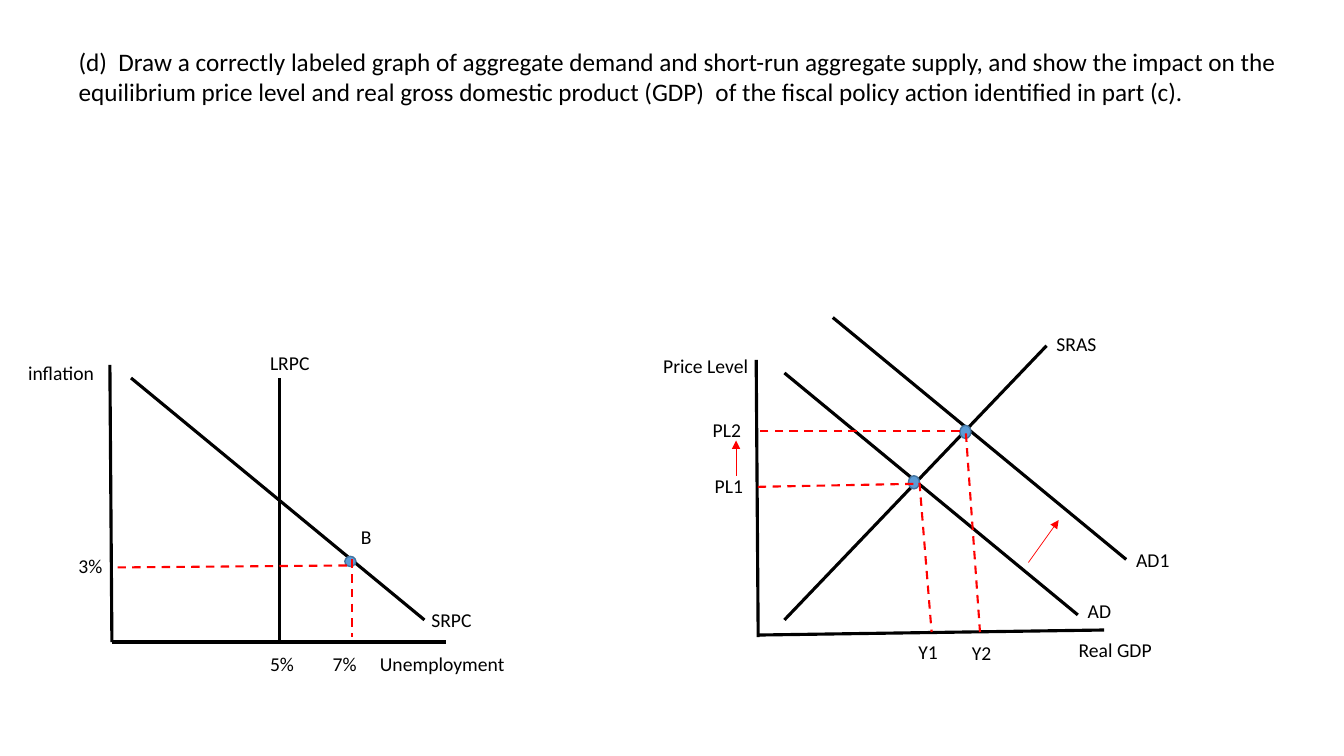
import pptx
import pptx.dml.color
import pptx.enum.dml
import pptx.enum.shapes
import pptx.enum.text
import pptx.oxml
import pptx.oxml.ns
import pptx.util
from pptx.util import Inches

COLOURS = {"ink": "000000", "guide": "FF0000", "point": "5B9BD5", "point_edge": "43739E"}
FONT = "Calibri"

QUESTION = (
    "(d)  Draw a correctly labeled graph of aggregate demand and short-run "
    "aggregate supply, and show the impact on the equilibrium price level and "
    "real gross domestic product (GDP)  of the fiscal policy action identified "
    "in part (c)."
)

# Phillips curve: lines are (x1, y1, x2, y2), labels (text, left, top)
PHILLIPS = {
    "curves": [
        (1.09, 3.62, 1.11, 6.37),  # inflation axis
        (4.42, 6.37, 1.11, 6.37),  # unemployment axis
        (4.21, 6.15, 1.3, 3.75),   # SRPC
        (2.77, 6.37, 2.77, 3.75),  # LRPC
    ],
    "points": [(3.42, 5.52, 0.11, 0.1)],
    "guides": [(3.49, 5.55, 3.49, 6.32), (3.44, 5.61, 1.11, 5.63)],
    "shifts": [],
    "labels": [
        ("inflation", 0.18, 3.53), ("Unemployment", 3.67, 6.42),
        ("SRPC", 4.18, 5.98), ("LRPC", 2.58, 3.43), ("B", 3.48, 5.16),
        ("5%", 2.58, 6.42), ("7%", 3.2, 6.42), ("3%", 0.68, 5.45),
    ],
}

# Aggregate demand and short-run aggregate supply
AGGREGATE = {
    "curves": [
        (7.5, 3.57, 7.52, 6.32),    # price level axis
        (10.95, 6.25, 7.52, 6.3),   # real GDP axis
        (10.69, 6.1, 7.78, 3.7),    # AD
        (10.38, 3.43, 7.78, 6.15),  # SRAS
        (11.17, 5.55, 8.26, 3.15),  # AD1
    ],
    "points": [(9.52, 4.22, 0.11, 0.13), (9.01, 4.72, 0.11, 0.13)],
    "guides": [
        (9.06, 4.8, 7.51, 4.83), (9.12, 4.79, 9.24, 6.27),
        (9.58, 4.3, 9.72, 6.27), (9.52, 4.28, 7.48, 4.28),
    ],
    "shifts": [(10.2, 5.58, 10.5, 5.16), (7.3, 4.72, 7.3, 4.37)],
    "labels": [
        ("Real GDP", 10.6, 6.28), ("Price Level", 6.48, 3.46),
        ("AD", 10.69, 5.89), ("SRAS", 10.38, 3.24), ("AD1", 11.17, 5.39),
        ("Y1", 9.01, 6.3), ("Y2", 9.54, 6.31),
        ("PL1", 6.99, 4.65), ("PL2", 6.97, 4.1),
    ],
}


def colour(name):
    return pptx.dml.color.RGBColor.from_string(COLOURS[name])


def add_run(paragraph, text, size):
    run = paragraph.add_run()
    run.text = text
    run.font.name = FONT
    run.font.size = pptx.util.Pt(size)
    run.font.color.rgb = colour("ink")


def add_question(slide):
    title = slide.shapes.title
    title.left, title.top = Inches(0.18), Inches(0.41)
    title.width, title.height = Inches(12.94), Inches(0.71)
    frame = title.text_frame
    frame.word_wrap = True
    frame.auto_size = pptx.enum.text.MSO_AUTO_SIZE.NONE
    frame.vertical_anchor = pptx.enum.text.MSO_ANCHOR.TOP
    frame.margin_left = Inches(0.6)
    paragraph = frame.paragraphs[0]
    paragraph.alignment = pptx.enum.text.PP_ALIGN.LEFT
    add_run(paragraph, QUESTION, 18)


def add_label(slide, text, left, top):
    width = 0.58 if text.endswith("%") else 1.5
    box = slide.shapes.add_textbox(Inches(left), Inches(top), Inches(width), Inches(0.34))
    box.text_frame.word_wrap = True
    add_run(box.text_frame.paragraphs[0], text, 14)


def add_line(slide, ends, colour_name, weight, dashed=False, arrow=False):
    connector = slide.shapes.add_connector(
        pptx.enum.shapes.MSO_CONNECTOR.STRAIGHT, *[Inches(value) for value in ends])
    line = connector.line
    line.color.rgb = colour(colour_name)
    line.width = pptx.util.Pt(weight)
    if dashed:
        line.dash_style = pptx.enum.dml.MSO_LINE.DASH
    properties = connector.element.spPr
    if arrow:
        outline = properties.find(pptx.oxml.ns.qn("a:ln"))
        tail = pptx.oxml.parse_xml(
            f'<a:tailEnd {pptx.oxml.ns.nsdecls("a")} type="triangle"/>')
        outline.append(tail)
    # An empty effect list removes the theme shadow
    properties.append(pptx.oxml.parse_xml(
        f'<a:effectLst {pptx.oxml.ns.nsdecls("a")}/>'))


def add_point(slide, bounds):
    point = slide.shapes.add_shape(
        pptx.enum.shapes.MSO_SHAPE.OVAL, *[Inches(value) for value in bounds])
    point.shadow.inherit = False
    point.fill.solid()
    point.fill.fore_color.rgb = colour("point")
    point.line.color.rgb = colour("point_edge")
    point.line.width = pptx.util.Pt(1)


def add_graph(slide, graph):
    for ends in graph["curves"]:
        add_line(slide, ends, "ink", 2.25)
    for bounds in graph["points"]:
        add_point(slide, bounds)
    for ends in graph["guides"]:
        add_line(slide, ends, "guide", 1.5, dashed=True)
    for ends in graph["shifts"]:
        add_line(slide, ends, "guide", 0.5, arrow=True)
    for text, left, top in graph["labels"]:
        add_label(slide, text, left, top)


def main():
    presentation = pptx.Presentation()
    presentation.slide_width = Inches(13.33)
    presentation.slide_height = Inches(7.5)
    title_only = presentation.slide_layouts[5]
    slide = presentation.slides.add_slide(title_only)

    add_question(slide)
    add_graph(slide, PHILLIPS)
    add_graph(slide, AGGREGATE)

    presentation.save("out.pptx")


if __name__ == "__main__":
    main()
